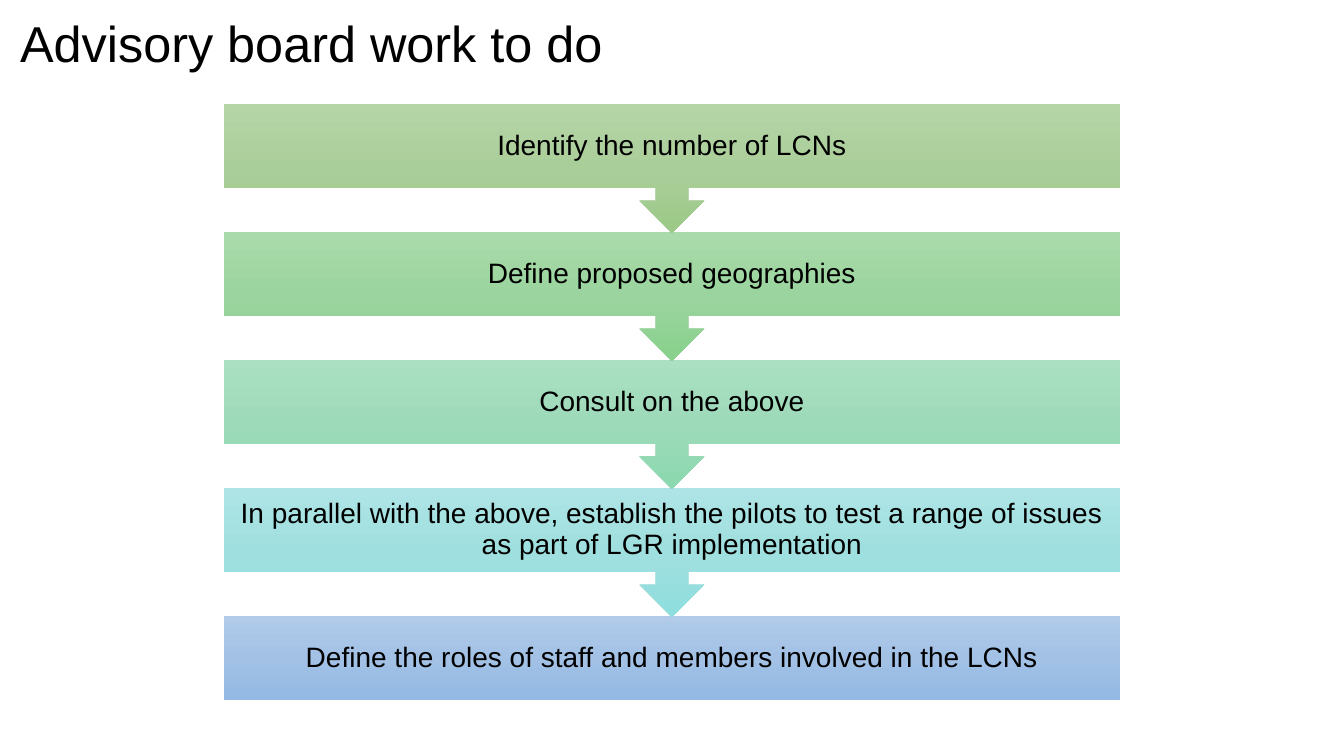
"""Build the advisory board slide: a title over five steps joined by arrows."""
import copy
from dataclasses import dataclass

import pptx
import pptx.dml.color
import pptx.enum.shapes
import pptx.enum.text
import pptx.oxml.ns
import pptx.util

RGBColor = pptx.dml.color.RGBColor
ShapeKind = pptx.enum.shapes.MSO_SHAPE
Align = pptx.enum.text.PP_ALIGN

EMU_PER_PX = 914400 / 100.8
STEP_LEFT, STEP_TOP, STEP_WIDTH, STEP_PITCH = 224, 104, 896, 128
CALLOUT_HEIGHT, BOX_HEIGHT, STEP_INSET = 129, 84, 16
ARROW_SHARE = 0.25

BLACK = RGBColor(0x00, 0x00, 0x00)
OLIVE = (RGBColor(0xB5, 0xD5, 0xA7), RGBColor(0xAA, 0xCE, 0x9A), RGBColor(0x9C, 0xC9, 0x87))
GREEN = (RGBColor(0xA9, 0xDA, 0xAB), RGBColor(0x9B, 0xD4, 0x9E), RGBColor(0x89, 0xD1, 0x8C))
MINT = (RGBColor(0xAB, 0xE0, 0xC3), RGBColor(0x9D, 0xDA, 0xB9), RGBColor(0x8C, 0xD8, 0xAF))
AQUA = (RGBColor(0xAE, 0xE4, 0xE5), RGBColor(0xA0, 0xDF, 0xDF), RGBColor(0x8F, 0xDE, 0xDE))
BLUE = (RGBColor(0xB1, 0xCB, 0xE9), RGBColor(0xA3, 0xC1, 0xE5), RGBColor(0x93, 0xB9, 0xE4))


@dataclass(frozen=True)
class Step:
    """One step of the work, with its gradient from top to bottom."""
    text: str
    colors: tuple[RGBColor, RGBColor, RGBColor]


STEPS = [
    Step("Identify the number of LCNs", OLIVE),
    Step("Define proposed geographies", GREEN),
    Step("Consult on the above", MINT),
    Step("In parallel with the above, establish the pilots to test a range of issues "
         "as part of LGR implementation", AQUA),
    Step("Define the roles of staff and members involved in the LCNs", BLUE),
]


def px(length: int) -> pptx.util.Emu:
    """Turn a length in px into EMU."""
    return pptx.util.Emu(round(length * EMU_PER_PX))


def set_format(target: object, values: dict[str, object]) -> None:
    """Set each named attribute of the target."""
    for name, value in values.items():
        setattr(target, name, value)


def write_text(box: pptx.shapes.base.BaseShape, text: str, size: int, align: Align) -> None:
    """Write one vertically centred paragraph in a shape."""
    frame = box.text_frame
    set_format(frame, {
        "word_wrap": True,
        "auto_size": pptx.enum.text.MSO_AUTO_SIZE.NONE,
        "vertical_anchor": pptx.enum.text.MSO_ANCHOR.MIDDLE,
    })
    para = frame.paragraphs[0]
    set_format(para, {"alignment": align, "line_spacing": 0.9, "space_before": pptx.util.Pt(0)})
    span = para.add_run()
    span.text = text
    set_format(span.font, {"name": "Arial", "size": pptx.util.Pt(size)})
    span.font.color.rgb = BLACK


def fill_gradient(box: pptx.shapes.autoshape.Shape, colors: tuple[RGBColor, ...]) -> None:
    """Fill a shape with evenly spaced colours running downwards."""
    box.fill.gradient()
    box.fill.gradient_angle = 270
    stop_list = box.element.spPr.find(".//" + pptx.oxml.ns.qn("a:gsLst"))
    stop_list.insert(1, copy.deepcopy(stop_list[0]))
    for index, (stop, color) in enumerate(zip(box.fill.gradient_stops, colors)):
        stop.position = index / (len(colors) - 1)
        stop.color.rgb = color


def add_step(page: pptx.slide.Slide, index: int, step: Step) -> None:
    """Draw a step, with an arrow to the next one unless it is the last."""
    is_last = index == len(STEPS) - 1
    kind = ShapeKind.RECTANGLE if is_last else ShapeKind.DOWN_ARROW_CALLOUT
    height = BOX_HEIGHT if is_last else CALLOUT_HEIGHT
    box = page.shapes.add_shape(
        kind, px(STEP_LEFT), px(STEP_TOP + index * STEP_PITCH), px(STEP_WIDTH), px(height))
    if not is_last:
        shares = [ARROW_SHARE] * 3 + [BOX_HEIGHT / CALLOUT_HEIGHT]
        for position, share in enumerate(shares):
            box.adjustments[position] = share
    box.shadow.inherit = False
    box.line.fill.background()
    fill_gradient(box, step.colors)
    sides = ("left", "top", "right", "bottom")
    set_format(box.text_frame, {f"margin_{side}": px(STEP_INSET) for side in sides})
    write_text(box, step.text, 20, Align.CENTER)


def main() -> None:
    """Build and save the deck."""
    deck = pptx.Presentation()
    set_format(deck, {"slide_width": px(1344), "slide_height": px(756)})
    page = deck.slides.add_slide(deck.slide_layouts.get_by_name("Title Only"))
    title = page.shapes.title
    set_format(title, {"left": px(10), "top": px(12), "width": px(1159), "height": px(68)})
    write_text(title, "Advisory board work to do", 36, Align.LEFT)
    for index, step in reversed(list(enumerate(STEPS))):
        add_step(page, index, step)
    deck.save("out.pptx")


if __name__ == "__main__":
    main()
